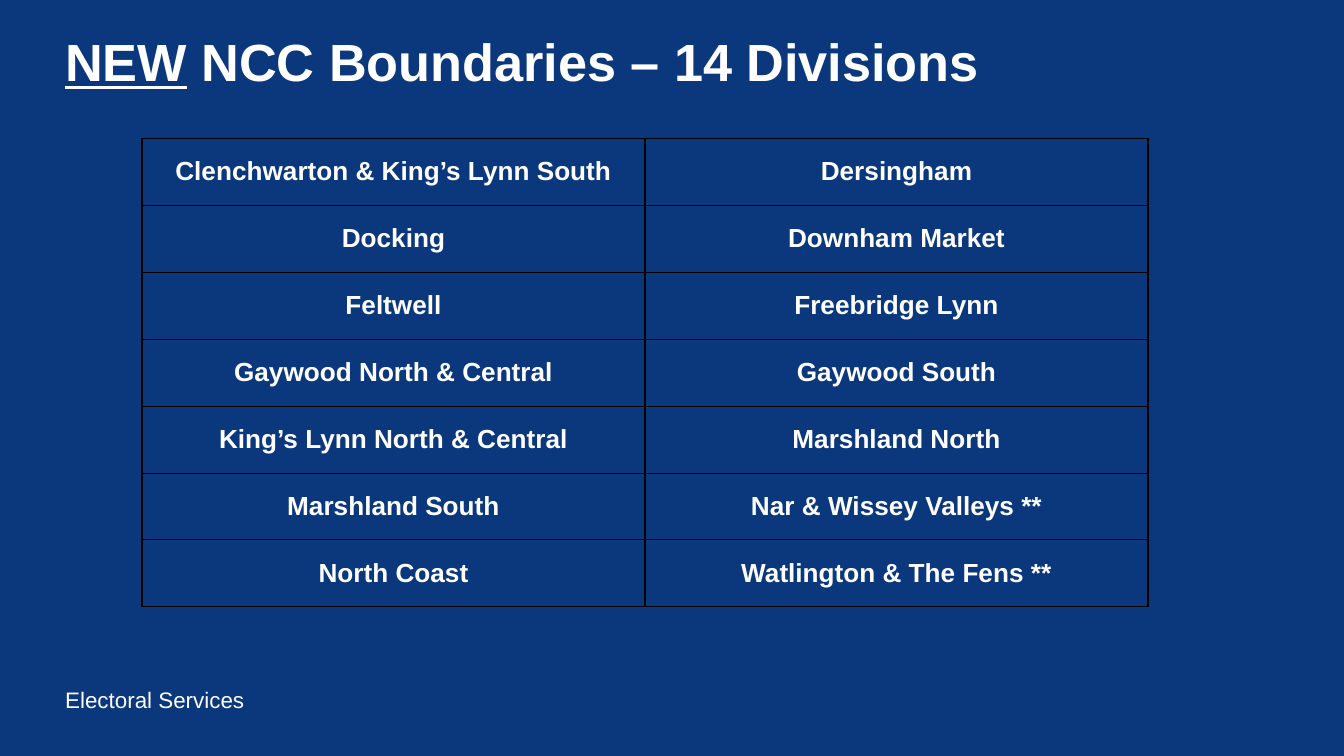
import dataclasses
import typing

import lxml.etree
import pptx
import pptx.dml.color
import pptx.enum.text
import pptx.oxml.ns
import pptx.util

EMU_PER_PX = 914400 / 134.4


@dataclasses.dataclass(frozen=True)
class Theme:
    background: str = "0B387C"
    text: str = "FFFFFF"
    border: str = "000000"
    font: str = "Arial"
    title_size: int = 28
    cell_size: int = 14
    footer_size: int = 12


class Frame(typing.NamedTuple):
    left: int
    top: int
    width: int
    height: int


class Span(typing.NamedTuple):
    text: str
    size: int
    bold: bool = False
    underline: bool = False


class Label(typing.NamedTuple):
    frame: Frame
    spans: list[Span]
    anchor: pptx.enum.text.MSO_ANCHOR
    line_spacing: float = 1.0


THEME = Theme()
PAGE_SIZE = (1344, 756)
TABLE_FRAME = Frame(142, 138, 1006, 469)
BORDER_POINTS = {"a:lnL": 1, "a:lnR": 1, "a:lnT": 0.5, "a:lnB": 0.5}

LABELS = [
    Label(
        Frame(52, 680, 258, 39),
        [Span("Electoral Services", THEME.footer_size)],
        pptx.enum.text.MSO_ANCHOR.TOP,
    ),
    Label(
        Frame(52, 20, 1239, 90),
        [
            Span("NEW", THEME.title_size, bold=True, underline=True),
            Span(" NCC Boundaries – 14 Divisions", THEME.title_size, bold=True),
        ],
        pptx.enum.text.MSO_ANCHOR.MIDDLE,
        line_spacing=0.9,
    ),
]

DIVISIONS = [
    ("Clenchwarton & King’s Lynn South", "Dersingham"),
    ("Docking", "Downham Market"),
    ("Feltwell", "Freebridge Lynn"),
    ("Gaywood North & Central", "Gaywood South"),
    ("King’s Lynn North & Central", "Marshland North"),
    ("Marshland South", "Nar & Wissey Valleys **"),
    ("North Coast", "Watlington & The Fens **"),
]


def px(length: float) -> pptx.util.Emu:
    return pptx.util.Emu(round(length * EMU_PER_PX))


def set_all(target: typing.Any, values: dict[str, typing.Any]) -> None:
    for name, value in values.items():
        setattr(target, name, value)


def add_span(para: typing.Any, span: Span) -> None:
    run = para.add_run()
    run.text = span.text
    set_all(run.font, {
        "name": THEME.font,
        "size": pptx.util.Pt(span.size),
        "bold": span.bold,
        "underline": span.underline,
    })
    run.font.color.rgb = pptx.dml.color.RGBColor.from_string(THEME.text)


def draw_label(page: typing.Any, label: Label) -> None:
    box = page.shapes.add_textbox(*map(px, label.frame))
    set_all(box.text_frame, {"word_wrap": True, "vertical_anchor": label.anchor})
    para = box.text_frame.paragraphs[0]
    para.line_spacing = label.line_spacing
    for span in label.spans:
        add_span(para, span)


def add_borders(cell: typing.Any) -> None:
    """Put the four edge lines ahead of the cell's fill, as the schema requires."""
    properties = cell._tc.get_or_add_tcPr()
    name = pptx.oxml.ns.qn
    for position, (edge, points) in enumerate(BORDER_POINTS.items()):
        line = lxml.etree.Element(name(edge), w=str(pptx.util.Pt(points)))
        fill = lxml.etree.SubElement(line, name("a:solidFill"))
        lxml.etree.SubElement(fill, name("a:srgbClr"), val=THEME.border)
        properties.insert(position, line)


def draw_table(page: typing.Any, frame: Frame, rows: list[tuple[str, str]]) -> None:
    table = page.shapes.add_table(len(rows), len(rows[0]), *map(px, frame)).table
    set_all(table, {"first_row": False, "horz_banding": False})
    for column in table.columns:
        column.width = px(frame.width / len(rows[0]))
    for row, names in zip(table.rows, rows):
        row.height = px(frame.height / len(rows))
        for cell, text in zip(row.cells, names):
            cell.fill.background()
            cell.vertical_anchor = pptx.enum.text.MSO_ANCHOR.MIDDLE
            para = cell.text_frame.paragraphs[0]
            para.alignment = pptx.enum.text.PP_ALIGN.CENTER
            add_span(para, Span(text, THEME.cell_size, bold=True))
            add_borders(cell)


def main() -> None:
    deck = pptx.Presentation()
    deck.slide_width, deck.slide_height = map(px, PAGE_SIZE)
    page = deck.slides.add_slide(deck.slide_layouts[6])
    page.background.fill.solid()
    page.background.fill.fore_color.rgb = pptx.dml.color.RGBColor.from_string(
        THEME.background
    )
    for label in LABELS:
        draw_label(page, label)
    draw_table(page, TABLE_FRAME, DIVISIONS)
    deck.save("out.pptx")


if __name__ == "__main__":
    main()
